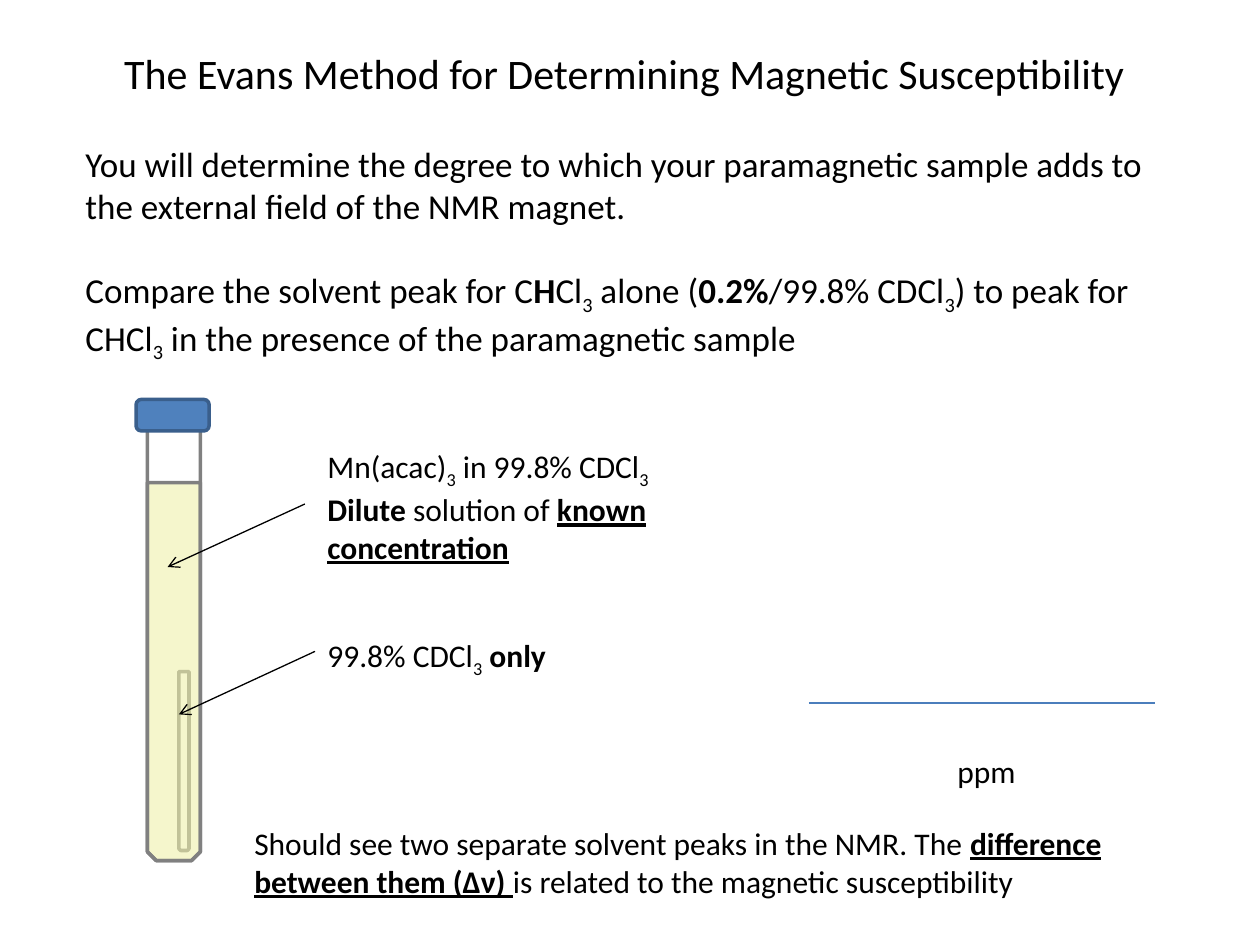
from dataclasses import dataclass
from typing import NamedTuple, Optional

from lxml.etree import SubElement
from pptx import Presentation
from pptx.dml.color import RGBColor
from pptx.enum.shapes import MSO_CONNECTOR, MSO_SHAPE
from pptx.enum.text import MSO_AUTO_SIZE, PP_ALIGN
from pptx.oxml.ns import qn
from pptx.util import Inches, Pt

BLACK = RGBColor(0x00, 0x00, 0x00)
WHITE = RGBColor(0xFF, 0xFF, 0xFF)
GLASS = RGBColor(0x80, 0x80, 0x80)
INNER_GLASS = RGBColor(0xBF, 0xBF, 0xBF)
SOLUTION = RGBColor(0xCD, 0xD2, 0x00)
CAP_FILL = RGBColor(0x4F, 0x81, 0xBD)
CAP_EDGE = RGBColor(0x3A, 0x5F, 0x8C)
AXIS = RGBColor(0x4B, 0x7E, 0xBC)
FONT = "Calibri"


class Box(NamedTuple):
    left: float
    top: float
    width: float
    height: float

    def lengths(self) -> list:
        return [Inches(value) for value in self]


class Span(NamedTuple):
    text: str
    bold: bool = False
    underline: bool = False
    subscript: bool = False


@dataclass
class Passage:
    box: Box
    paragraphs: list
    size: int = 18
    align: PP_ALIGN = PP_ALIGN.LEFT


@dataclass
class Vessel:
    """A part of the NMR tube; fill None leaves it hollow."""
    box: Box
    edge: RGBColor
    fill: Optional[RGBColor] = None
    opacity: int = 100
    preset: MSO_SHAPE = MSO_SHAPE.SNIP_2_SAME_RECTANGLE
    rotation: int = 180


@dataclass
class Stroke:
    start: tuple
    end: tuple
    color: RGBColor = BLACK
    width: float = 0.75
    arrow: bool = True


SUB_3 = Span("3", subscript=True)

TUBE_PARTS = [
    Vessel(Box(1.42, 5.33, 0.08, 1.42), INNER_GLASS, WHITE),
    Vessel(Box(1.17, 3.83, 0.42, 3), GLASS, SOLUTION, opacity=20),
    Vessel(Box(1.17, 3.25, 0.42, 3.58), GLASS),
    Vessel(Box(1.08, 3.17, 0.58, 0.25), CAP_EDGE, CAP_FILL,
           preset=MSO_SHAPE.ROUNDED_RECTANGLE, rotation=0),
]

STROKES = [
    Stroke((2.42, 4), (1.33, 4.5)),
    Stroke((2.5, 5.17), (1.42, 5.67)),
    Stroke((6.42, 5.58), (9.17, 5.58), AXIS, 1.5, arrow=False),
]

PASSAGES = [
    Passage(Box(0.83, 0.33, 8.25, 0.51),
            [[Span("The Evans Method for Determining Magnetic Susceptibility")]],
            24, PP_ALIGN.CENTER),
    Passage(Box(0.58, 1.08, 8.75, 0.77),
            [[Span("You will determine the degree to which your paramagnetic "
                   "sample adds to the external field of the NMR magnet.")]], 20),
    Passage(Box(0.58, 2.08, 8.75, 0.77),
            [[Span("Compare the solvent peak for C"), Span("H", bold=True),
              Span("Cl"), SUB_3, Span(" alone ("), Span("0.2%", bold=True),
              Span("/99.8% CDCl"), SUB_3, Span(") to peak for CHCl"), SUB_3,
              Span(" in the presence of the paramagnetic sample")]], 20),
    Passage(Box(2.5, 3.5, 3, 1.01),
            [[Span("Mn(acac)"), SUB_3, Span(" in 99.8% CDCl"), SUB_3],
             [Span("Dilute", bold=True), Span(" solution of "),
              Span("known concentration", bold=True, underline=True)]]),
    Passage(Box(2.5, 5, 4.25, 0.4),
            [[Span("99.8% CDCl"), SUB_3, Span(" only", bold=True)]]),
    Passage(Box(7.5, 5.92, 0.75, 0.4), [[Span("ppm")]]),
    Passage(Box(1.92, 6.49, 7.5, 0.71),
            [[Span("Should see two separate solvent peaks in the NMR. The "),
              Span("difference between them (Δν)", bold=True, underline=True),
              Span(" ", underline=True),
              Span("is related to the magnetic susceptibility")]]),
]


def draw_vessel(slide, vessel: Vessel) -> None:
    shape = slide.shapes.add_shape(vessel.preset, *vessel.box.lengths())
    shape.rotation = vessel.rotation
    shape.shadow.inherit = False
    shape.line.color.rgb = vessel.edge
    shape.line.width = Pt(2)
    if vessel.fill is None:
        shape.fill.background()
        return
    shape.fill.solid()
    shape.fill.fore_color.rgb = vessel.fill
    if vessel.opacity < 100:
        color = shape.fill._xPr.find(qn("a:solidFill"))[0]
        SubElement(color, qn("a:alpha"), val=str(vessel.opacity * 1000))


def draw_stroke(slide, stroke: Stroke) -> None:
    ends = [Inches(value) for value in (*stroke.start, *stroke.end)]
    connector = slide.shapes.add_connector(MSO_CONNECTOR.STRAIGHT, *ends)
    connector.line.color.rgb = stroke.color
    connector.line.width = Pt(stroke.width)
    if stroke.arrow:
        SubElement(connector.line._get_or_add_ln(), qn("a:tailEnd"), type="arrow")
    SubElement(connector._element.spPr, qn("a:effectLst"))


def add_span(paragraph, span: Span, size: int) -> None:
    run = paragraph.add_run()
    run.text = span.text
    font = run.font
    font.name = FONT
    font.size = Pt(size)
    font.color.rgb = BLACK
    font.bold = span.bold
    font.underline = span.underline
    if span.subscript:
        run._r.get_or_add_rPr().set("baseline", "-25000")


def write_passage(slide, passage: Passage) -> None:
    frame = slide.shapes.add_textbox(*passage.box.lengths()).text_frame
    frame.word_wrap = True
    frame.auto_size = MSO_AUTO_SIZE.SHAPE_TO_FIT_TEXT
    for index, spans in enumerate(passage.paragraphs):
        paragraph = frame.add_paragraph() if index else frame.paragraphs[0]
        paragraph.alignment = passage.align
        for span in spans:
            add_span(paragraph, span, passage.size)


def main() -> None:
    presentation = Presentation()
    presentation.slide_width = Inches(10)
    presentation.slide_height = Inches(7.5)
    slide = presentation.slides.add_slide(presentation.slide_layouts[6])
    for vessel in TUBE_PARTS:
        draw_vessel(slide, vessel)
    for stroke in STROKES:
        draw_stroke(slide, stroke)
    for passage in PASSAGES:
        write_passage(slide, passage)
    presentation.save("out.pptx")


if __name__ == "__main__":
    main()
